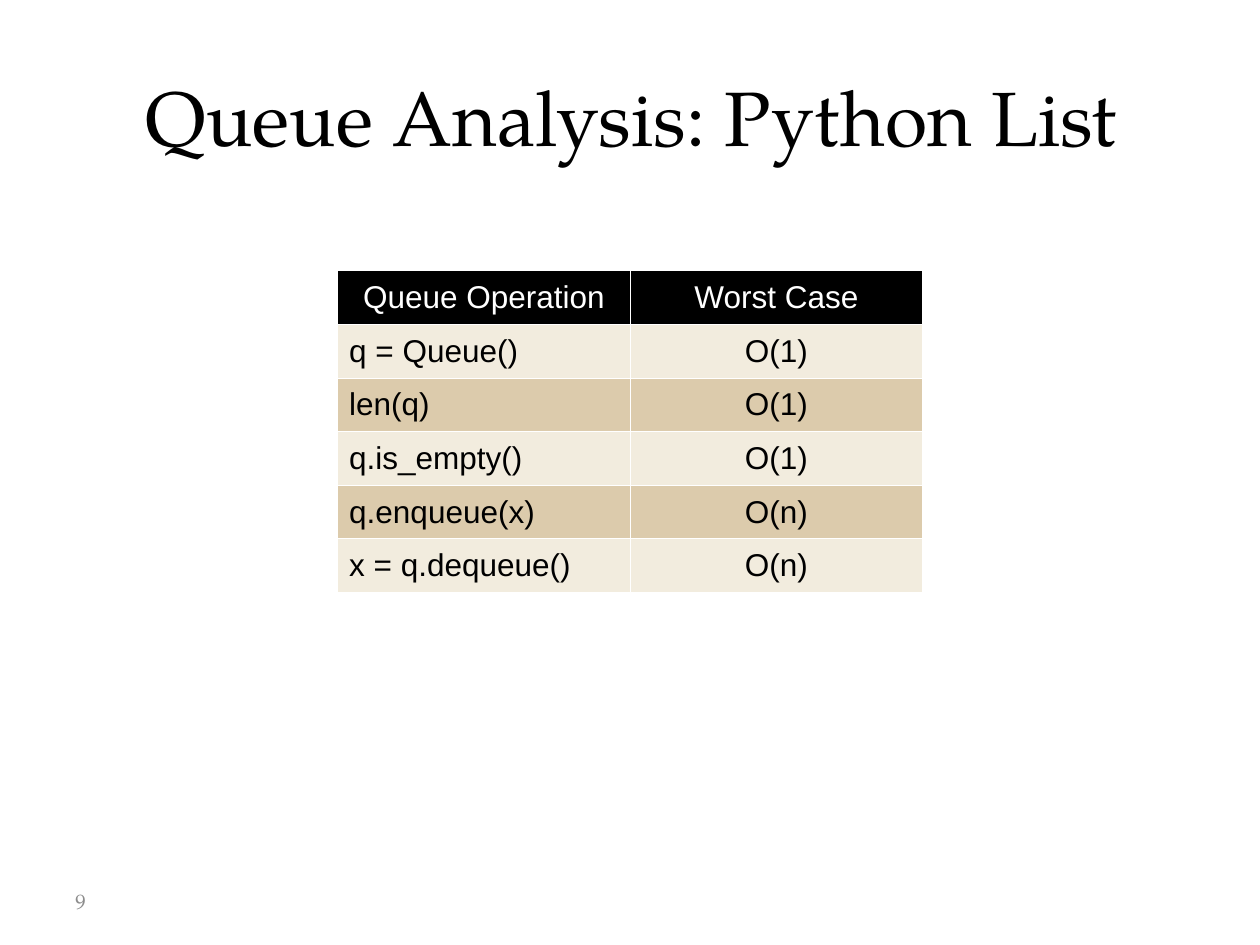
import pptx
import pptx.dml.color
import pptx.enum.text
import pptx.util
from lxml import etree

Cm = pptx.util.Cm
Pt = pptx.util.Pt
ALIGN = pptx.enum.text.PP_ALIGN
MIDDLE = pptx.enum.text.MSO_ANCHOR.MIDDLE
NS = "http://schemas.openxmlformats.org/drawingml/2006/main"

SERIF = "TeX Gyre Pagella"
SANS = "Arial"
HUES = {
    "ink": "000000",
    "white": "FFFFFF",
    "gray": "8C8C8C",
    "light": "F2ECDE",
    "tan": "DCCBAC",
}
ROWS = [
    ("Queue Operation", "Worst Case"),
    ("q = Queue()", "O(1)"),
    ("len(q)", "O(1)"),
    ("q.is_empty()", "O(1)"),
    ("q.enqueue(x)", "O(n)"),
    ("x = q.dequeue()", "O(n)"),
]


def color(name):
    return pptx.dml.color.RGBColor.from_string(HUES[name])


def style(para, face, size, hue, align):
    para.alignment = align
    para.font.name = face
    para.font.size = Pt(size)
    para.font.color.rgb = color(hue)


def add_text(slide, box, text, size, hue, align):
    frame = slide.shapes.add_textbox(*map(Cm, box)).text_frame
    frame.word_wrap = True
    frame.vertical_anchor = MIDDLE
    frame.text = text
    style(frame.paragraphs[0], SERIF, size, hue, align)
    return frame


def add_title(slide, box, text):
    frame = add_text(slide, box, text, 44, "ink", ALIGN.CENTER)
    frame.margin_top, frame.margin_bottom = Cm(0.08), Cm(0.13)


def add_edges(cell, sides):
    """Draw thin white borders; call before the cell is filled."""
    props = cell._tc.get_or_add_tcPr()
    for side in sides:
        line = etree.SubElement(props, f"{{{NS}}}ln{side}", w=str(Pt(0.57)))
        fill = etree.SubElement(line, f"{{{NS}}}solidFill")
        etree.SubElement(fill, f"{{{NS}}}srgbClr", val=HUES["white"])


def add_grid(slide, box, rows):
    count, wide = len(rows), len(rows[0])
    grid = slide.shapes.add_table(count, wide, *map(Cm, box)).table
    for r, row in enumerate(rows):
        head = r == 0
        fill = "ink" if head else "light" if r % 2 else "tan"
        for c, text in enumerate(row):
            cell = grid.cell(r, c)
            add_edges(cell, "LRTB")
            cell.fill.solid()
            cell.fill.fore_color.rgb = color(fill)
            cell.vertical_anchor = MIDDLE
            cell.margin_left = cell.margin_right = Cm(0.23)
            cell.margin_top, cell.margin_bottom = Cm(0.2), Cm(0.15)
            cell.text = text
            para = cell.text_frame.paragraphs[0]
            align = ALIGN.CENTER if head or c else ALIGN.LEFT
            style(para, SANS, 18, "white" if head else "ink", align)
            para.font.bold = False
            para.line_spacing = 0.93


def main():
    deck = pptx.Presentation()
    deck.slide_width, deck.slide_height = Cm(25.4), Cm(19.05)
    slide = deck.slides.add_slide(deck.slide_layouts[6])
    add_text(slide, (1.27, 17.65, 5.92, 1.02), "9", 12, "gray", ALIGN.LEFT)
    add_title(slide, (1.27, 0.76, 22.94, 3.18), "Queue Analysis: Python List")
    add_grid(slide, (6.81, 5.46, 11.79, 6.48), ROWS)
    deck.save("out.pptx")


if __name__ == "__main__":
    main()
